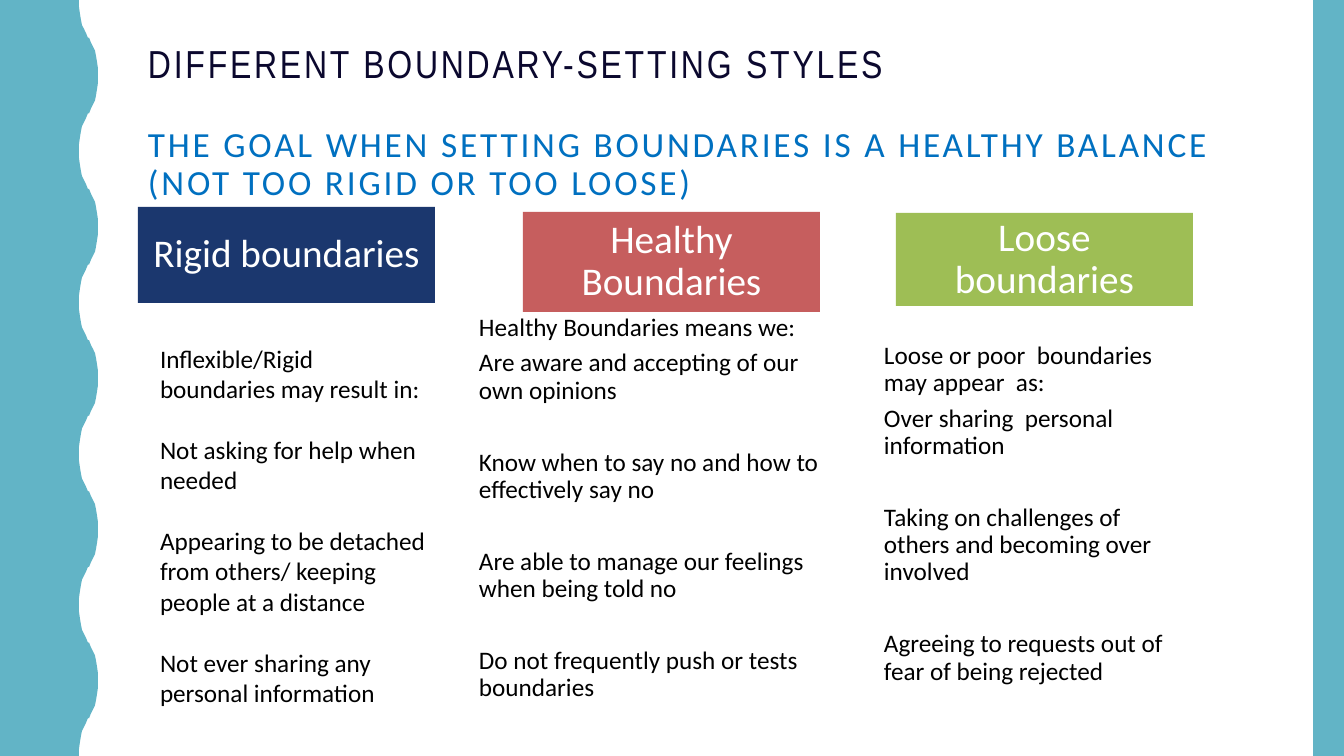
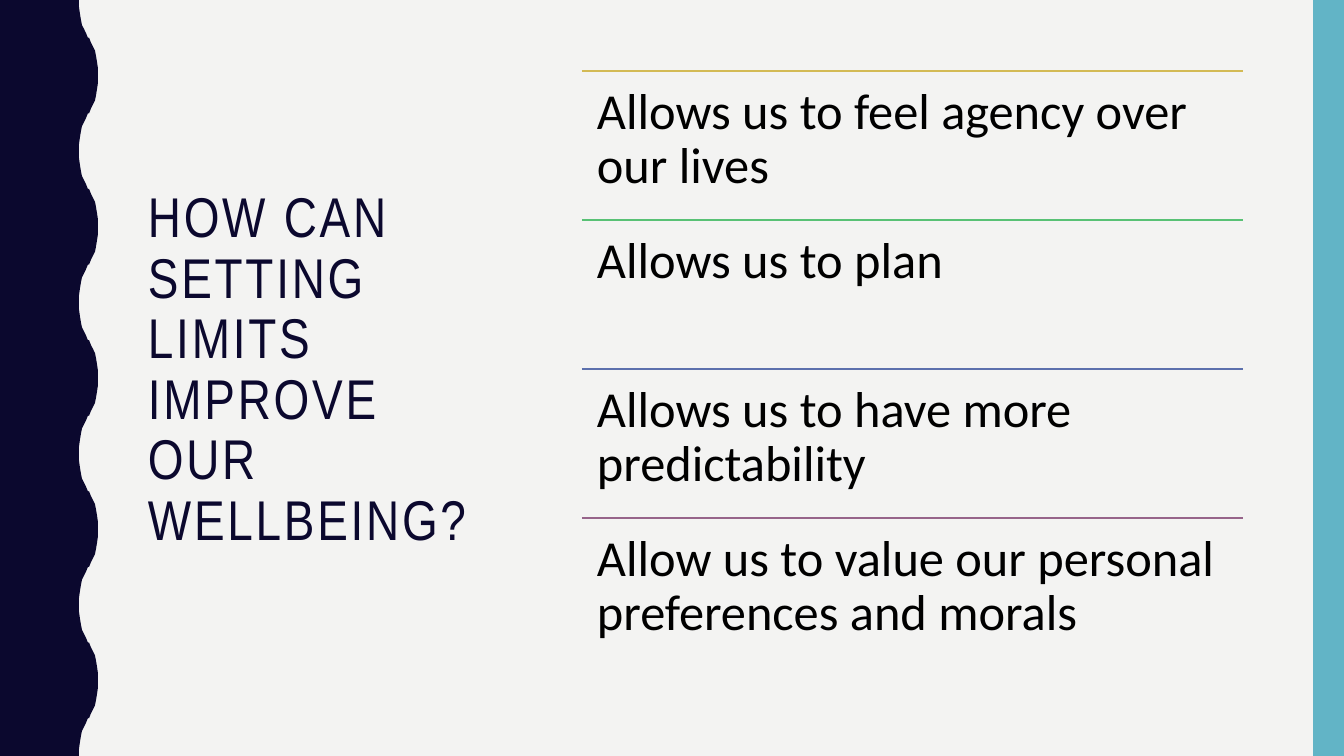
from lxml.etree import SubElement
from pptx import Presentation
from pptx.dml.color import RGBColor as Rgb
from pptx.enum.shapes import MSO_CONNECTOR as Connector, MSO_SHAPE as Shape
from pptx.enum.text import MSO_ANCHOR as Anchor, PP_ALIGN as Align
from pptx.oxml.ns import qn
from pptx.util import Emu, Pt

SCALE = 914400 / 100.8
WIDTH, HEIGHT = 1344, 756
COLORS = {
    "ink": "0B082E", "teal": "62B4C6", "white": "FFFFFF", "mist": "F3F3F2",
    "black": "000000", "blue": "0070C0", "navy": "1B376E", "red": "C65E5E",
    "green": "9EBE55", "gold": "D3BA55", "mint": "58C175", "slate": "5C70AD",
    "plum": "96648A",
}
STYLES = {
    "title": {"name": "Arial Narrow", "size": Pt(40), "color": "ink", "spc": 200},
    "small_title": {"name": "Arial Narrow", "size": Pt(27.9), "color": "ink", "spc": 200},
    "subtitle": {"name": "Calibri", "size": Pt(25.2), "color": "blue", "spc": 200},
    "header": {"name": "Calibri", "size": Pt(28), "color": "white"},
    "body": {"name": "Calibri", "size": Pt(18), "color": "black"},
    "benefit": {"name": "Calibri", "size": Pt(36), "color": "black"},
}
WAVE_BANDS = 10
WAVE_LEFT, WAVE_DEPTH = 79, 19
WAVE_QUARTER = [(0, 0), (0, 7), (1, 14), (2, 20), (3, 25), (5, 29), (7, 33), (9, 38)]

COLUMN_HEADERS = [
    ("Rigid boundaries", "navy", (138, 207, 297, 96)),
    ("Healthy Boundaries", "red", (523, 212, 297, 100)),
    ("Loose boundaries", "green", (896, 213, 297, 93)),
]
COLUMN_TEXTS = [
    {"box": (150, 338, 298, 407), "insets": (10, 5), "anchor": Anchor.TOP,
     "line_spacing": 1.0, "gaps": (22, 22),
     "texts": ["Inflexible/Rigid  boundaries may result in:",
               "Not asking for help when needed",
               "Appearing to be detached from others/ keeping people at a distance",
               "Not ever sharing any personal information"]},
    {"box": (472, 320, 366, 377), "insets": (7, 7), "anchor": Anchor.MIDDLE,
     "line_spacing": 0.9, "gaps": (6, 32),
     "texts": ["Healthy Boundaries means we:",
               "Are aware and accepting of our own opinions",
               "Know when to say no and how to effectively say no",
               "Are able to manage our feelings when being told no",
               "Do not frequently push or tests boundaries"]},
    {"box": (877, 356, 308, 316), "insets": (7, 7), "anchor": Anchor.MIDDLE,
     "line_spacing": 0.9, "gaps": (6, 32),
     "texts": ["Loose or poor  boundaries may appear  as:",
               "Over sharing  personal information",
               "Taking on challenges of others and becoming over involved",
               "Agreeing to requests out of fear of being rejected"]},
]
BENEFITS = [
    ("Allows us to feel agency over our lives", "gold"),
    ("Allows us to plan", "mint"),
    ("Allows us to have more predictability", "slate"),
    ("Allow us to value our personal preferences and morals", "plum"),
]


def px(length):
    """Turn pixels into EMU."""
    return Emu(round(length * SCALE))


def rgb(name):
    """Look up a named colour."""
    return Rgb.from_string(COLORS[name])


def paint(shape, color):
    """Give a shape a plain fill with no line or shadow."""
    shape.shadow.inherit = False
    shape.fill.solid()
    shape.fill.fore_color.rgb = rgb(color)
    shape.line.fill.background()


def add_rect(page, box, color):
    """Add a plain rectangle."""
    rect = page.shapes.add_shape(Shape.RECTANGLE, *map(px, box))
    paint(rect, color)
    return rect


def format_frame(frame, insets, anchor):
    """Set wrapping, anchor and insets of a text frame."""
    across, down = map(px, insets)
    values = {"word_wrap": True, "vertical_anchor": anchor,
              "margin_left": across, "margin_right": across,
              "margin_top": down, "margin_bottom": down}
    for name, value in values.items():
        setattr(frame, name, value)


def write(frame, lines, align=Align.LEFT, line_spacing=0.9):
    """Fill a frame with (text, style, points before) paragraphs."""
    for index, (text, style, before) in enumerate(lines):
        para = frame.add_paragraph() if index else frame.paragraphs[0]
        layout = {"alignment": align, "line_spacing": line_spacing,
                  "space_before": Pt(before), "space_after": Pt(0)}
        for name, value in layout.items():
            setattr(para, name, value)
        span = para.add_run()
        span.text = text
        look = STYLES[style]
        for name in ("name", "size"):
            setattr(span.font, name, look[name])
        span.font.color.rgb = rgb(look["color"])
        if "spc" in look:
            span.font._element.set("spc", str(look["spc"]))


def add_text(page, box, lines, insets=(10, 5), anchor=Anchor.MIDDLE, line_spacing=0.9):
    """Add a wrapped text box."""
    frame = page.shapes.add_textbox(*map(px, box)).text_frame
    format_frame(frame, insets, anchor)
    write(frame, lines, line_spacing=line_spacing)


def add_wave(page, box, color):
    """Add the left band with its scalloped right edge."""
    left, top, width, height = box
    step = height / WAVE_BANDS
    swell = WAVE_QUARTER + [(WAVE_DEPTH - x, step - y) for x, y in reversed(WAVE_QUARTER)]
    edge = []
    for band in range(WAVE_BANDS):
        for x, y in swell:
            depth = WAVE_DEPTH - x if band % 2 else x
            edge.append((left + width - WAVE_DEPTH + depth, top + band * step + y))
    points = edge + [(left, top + height)]
    builder = page.shapes.build_freeform(px(left), px(top))
    builder.add_line_segments([(px(x), px(y)) for x, y in points], close=True)
    paint(builder.convert_to_shape(), color)


def add_page(deck, background, wave):
    """Add a blank page with its background and side bands."""
    page = deck.slides.add_slide(deck.slide_layouts[6])
    page.background.fill.solid()
    page.background.fill.fore_color.rgb = rgb(background)
    add_wave(page, (0, 0, WAVE_LEFT + WAVE_DEPTH, HEIGHT), wave)
    add_rect(page, (WIDTH - 31, 0, 31, HEIGHT), "teal")
    return page


def add_header(page, box, text, color):
    """Add a coloured column header."""
    header = add_rect(page, box, color)
    format_frame(header.text_frame, (12, 12), Anchor.MIDDLE)
    write(header.text_frame, [(text, "header", 0)], Align.CENTER)


def add_column(page, box, texts, gaps, **layout):
    """Add a column of body text, with one gap after its intro and one elsewhere."""
    intro_gap, gap = gaps
    befores = [0, intro_gap] + [gap] * (len(texts) - 2)
    lines = [(text, "body", before) for text, before in zip(texts, befores)]
    add_text(page, box, lines, **layout)


def add_benefits(page, box, benefits):
    """Stack equal rows of text, each under a coloured rule."""
    left, top, width, height = box
    row = height / len(benefits)
    for index, (text, color) in enumerate(benefits):
        y = top + index * row
        rule = page.shapes.add_connector(
            Connector.STRAIGHT, px(left), px(y), px(left + width), px(y))
        rule.line.color.rgb = rgb(color)
        rule.line.width = Pt(1)
        SubElement(rule._element.spPr, qn("a:effectLst"))
        add_text(page, (left, y, width, row), [(text, "benefit", 0)], (15, 15), Anchor.TOP)


def build_styles_page(deck):
    """Build the page that compares three boundary styles."""
    page = add_page(deck, "white", "teal")
    add_text(page, (138, 42, 1122, 164), [
        ("DIFFERENT BOUNDARY-SETTING STYLES", "small_title", 0),
        ("THE GOAL WHEN SETTING BOUNDARIES IS A HEALTHY BALANCE "
         "(NOT TOO RIGID OR TOO LOOSE)", "subtitle", 28),
    ])
    for text, color, box in COLUMN_HEADERS:
        add_header(page, box, text, color)
    for column in COLUMN_TEXTS:
        add_column(page, **column)


def build_benefits_page(deck):
    """Build the page that lists what limits give us."""
    page = add_page(deck, "mist", "ink")
    add_text(page, (138, 72, 373, 598),
             [("HOW CAN SETTING LIMITS IMPROVE OUR WELLBEING?", "title", 0)])
    add_benefits(page, (582, 71, 661, 596), BENEFITS)


def main():
    """Build and save the deck."""
    deck = Presentation()
    deck.slide_width, deck.slide_height = px(WIDTH), px(HEIGHT)
    build_styles_page(deck)
    build_benefits_page(deck)
    deck.save("out.pptx")


if __name__ == "__main__":
    main()
